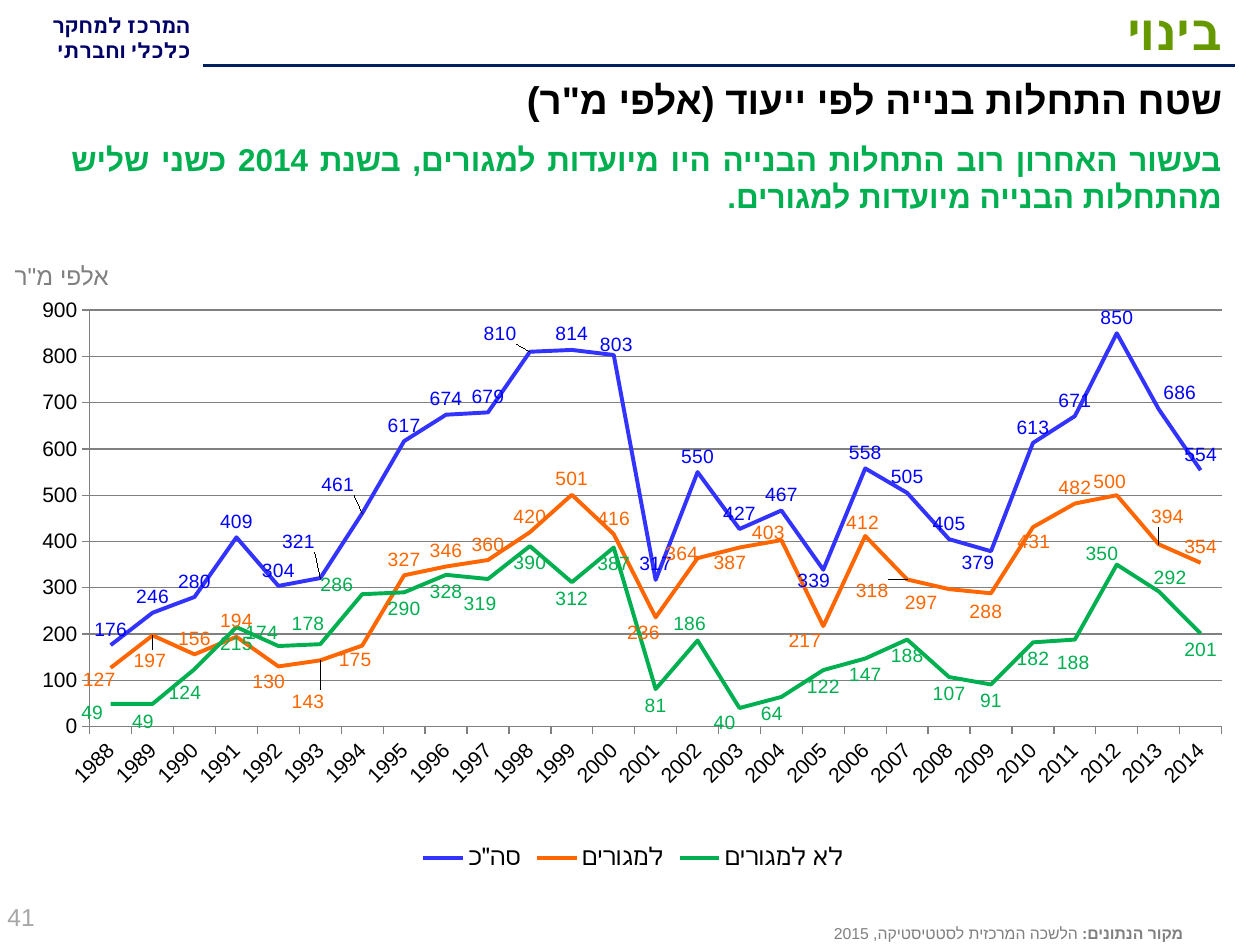
from lxml import etree
from pptx import Presentation
from pptx.chart.data import CategoryChartData
from pptx.dml.color import RGBColor
from pptx.enum.chart import (XL_CHART_TYPE, XL_LABEL_POSITION, XL_LEGEND_POSITION,
                             XL_MARKER_STYLE, XL_TICK_MARK)
from pptx.enum.shapes import MSO_CONNECTOR
from pptx.enum.text import MSO_ANCHOR, PP_ALIGN
from pptx.oxml.ns import qn
from pptx.util import Cm, Pt

LEFT, CENTER, RIGHT, JUSTIFY = PP_ALIGN.LEFT, PP_ALIGN.CENTER, PP_ALIGN.RIGHT, PP_ALIGN.JUSTIFY
TOP, MIDDLE = MSO_ANCHOR.TOP, MSO_ANCHOR.MIDDLE
ABOVE, BELOW = XL_LABEL_POSITION.ABOVE, XL_LABEL_POSITION.BELOW

GREEN, GRAY, BLACK = "00B050", "808080", "000000"
YEARS = [str(year) for year in range(1988, 2015)]

# Name, line colour, label colour, label position, values,
# and label shifts in points (right, down) keyed by year.
SERIES = [
    ("סה\"כ", "3333FF", "0000FF", ABOVE,
     [176, 246, 280, 409, 304, 321, 461, 617, 674, 679, 810, 814, 803, 317,
      550, 427, 467, 339, 558, 505, 405, 379, 613, 671, 850, 686, 554],
     {1993: (-12.5, -11.5), 1994: (-14, -7.5), 1998: (-17, -1.5), 2000: (1.5, 3),
      2005: (-5.5, 15.5), 2009: (-7.5, 15.5), 2013: (12, -0.5)}),
    ("למגורים", "FF6600", "FF6600", ABOVE,
     [127, 197, 156, 194, 130, 143, 175, 327, 346, 360, 420, 501, 416, 236,
      364, 387, 403, 217, 412, 318, 297, 288, 431, 482, 500, 394, 354],
     {1988: (-6.5, 16), 1989: (-1.5, 23.5), 1992: (-5.5, 17.5), 1993: (-7, 32.5),
      1994: (-4, 17), 2001: (-7, 17.5), 2002: (-9, 6.5), 2003: (-5.5, 17.5),
      2004: (-7.5, 4.5), 2005: (-10.5, 17.5), 2006: (-1.5, 1.5), 2007: (-20, 15.5),
      2008: (-16, 16.5), 2009: (-3, 19.5), 2010: (0.5, 17.5), 2012: (-4, 1.5),
      2013: (5, -6.5)}),
    ("לא למגורים", GREEN, GREEN, BELOW,
     [49, 49, 124, 215, 174, 178, 286, 290, 328, 319, 390, 312, 387, 81,
      186, 40, 64, 122, 147, 188, 107, 91, 182, 188, 350, 292, 201],
     {1988: (-10.5, -4.5), 1989: (-5.5, 0.5), 1990: (-5.5, 4), 1992: (-9.5, -17),
      1993: (-7, -21), 1994: (-14.5, -15), 1997: (-4.5, 4.5), 2002: (-4.5, -19),
      2003: (-8.5, -1), 2004: (-5.5, 0), 2011: (-1, 4), 2012: (-8.5, -16),
      2013: (6.5, -17.5)}),
]


def color(hex_value):
    return RGBColor.from_string(hex_value)


def set_line(line_format, hex_value, width):
    line_format.color.rgb = color(hex_value)
    line_format.width = Pt(width)


def manual_layout(**settings):
    layout = etree.Element(qn("c:layout"))
    manual = etree.SubElement(layout, qn("c:manualLayout"))
    for name, value in settings.items():
        etree.SubElement(manual, qn(f"c:{name}")).set("val", str(value))
    return layout


class SlideBuilder:
    def __init__(self, slide, font_name="Arial"):
        self.slide = slide
        self.font_name = font_name

    def style(self, font, size, hex_value, bold=False, name=None):
        font.size = Pt(size)
        font.bold = bold
        font.color.rgb = color(hex_value)
        font.name = name or self.font_name

    def text(self, box, paragraphs, size, hex_value, align=RIGHT, bold=False,
             name=None, anchor=TOP, rtl=True):
        """Add a text box; each paragraph is a list of (text, bold) runs or a string."""
        text_frame = self.slide.shapes.add_textbox(*map(Cm, box)).text_frame
        text_frame.word_wrap = True
        text_frame.vertical_anchor = anchor
        for index, content in enumerate(paragraphs):
            paragraph = text_frame.add_paragraph() if index else text_frame.paragraphs[0]
            paragraph.alignment = align
            if rtl:
                paragraph._p.get_or_add_pPr().set("rtl", "1")
            runs = [(content, bold)] if isinstance(content, str) else content
            for run_text, run_bold in runs:
                run = paragraph.add_run()
                run.text = run_text
                self.style(run.font, size, hex_value, run_bold, name)
                complex_script = etree.SubElement(run._r.get_or_add_rPr(), qn("a:cs"))
                complex_script.set("typeface", name or self.font_name)

    def rule(self, start, end, y, hex_value, width):
        connector = self.slide.shapes.add_connector(
            MSO_CONNECTOR.STRAIGHT, Cm(start), Cm(y), Cm(end), Cm(y))
        set_line(connector.line, hex_value, width)
        etree.SubElement(connector._element.spPr, qn("a:effectLst"))

    def line_chart(self, box, categories, series_rows):
        data = CategoryChartData(number_format="#,##0")
        data.categories = categories
        for name, _, _, _, values, _ in series_rows:
            data.add_series(name, values)
        frame = self.slide.shapes.add_chart(XL_CHART_TYPE.LINE, *map(Cm, box), data)
        chart = frame.chart
        chart.has_title = False
        self.style(chart.font, 14, BLACK)

        plot_area = chart._chartSpace.chart.plotArea
        for layout in plot_area.findall(qn("c:layout")):
            plot_area.remove(layout)
        plot_area.insert(0, manual_layout(
            layoutTarget="inner", xMode="edge", yMode="edge",
            x=0.053, y=0.035, w=0.931, h=0.711))

        self.axes(chart)
        chart.has_legend = True
        legend = chart.legend
        legend.position = XL_LEGEND_POSITION.BOTTOM
        legend.include_in_layout = False
        self.style(legend.font, 14, BLACK)
        legend._element.find(qn("c:legendPos")).addnext(
            manual_layout(xMode="edge", yMode="edge", x=0.33, y=0.9))

        for series, row in zip(chart.plots[0].series, series_rows):
            self.series(series, row, frame)

    def axes(self, chart):
        for axis in (chart.category_axis, chart.value_axis):
            axis.major_tick_mark = XL_TICK_MARK.OUTSIDE
            axis.minor_tick_mark = XL_TICK_MARK.NONE
            self.style(axis.tick_labels.font, 12, BLACK)
            set_line(axis.format.line, GRAY, 0.75)
        labels = chart.category_axis._element.find(qn("c:txPr"))
        labels.find(qn("a:bodyPr")).set("rot", "-2700000")
        value_axis = chart.value_axis
        value_axis.minimum_scale, value_axis.maximum_scale = 0, 900
        value_axis.major_unit = 100
        value_axis.has_major_gridlines = True
        set_line(value_axis.major_gridlines.format.line, GRAY, 0.75)

    def series(self, series, row, frame):
        _, line_color, label_color, position, _, shifts = row
        series.smooth = False
        series.marker.style = XL_MARKER_STYLE.NONE
        set_line(series.format.line, line_color, 2.25)
        labels = series.data_labels
        labels.show_value = True
        labels.number_format = "#,##0"
        labels.number_format_is_linked = False
        labels.position = position
        self.style(labels.font, 11, label_color)
        for year, (right, down) in shifts.items():
            label = series.points[YEARS.index(str(year))].data_label
            label.position = position
            self.style(label.font, 11, label_color)
            label._dLbl.find(qn("c:idx")).addnext(manual_layout(
                x=round(Pt(right) / frame.width, 4), y=round(Pt(down) / frame.height, 4)))


def main():
    presentation = Presentation()
    presentation.slide_width, presentation.slide_height = Cm(25.4), Cm(19.05)
    builder = SlideBuilder(presentation.slides.add_slide(presentation.slide_layouts[6]))

    builder.text((-0.38, 0.13, 4.47, 1.3), ["המרכז למחקר", "כלכלי וחברתי"],
                 12, "000066", bold=True, name="Roboto")
    builder.rule(24.89, 4.09, 1.32, "002060", 2.25)
    builder.text((4.01, -0.08, 20.88, 1.4), ["בינוי"], 28, "669900",
                 bold=True, name="Roboto", anchor=MIDDLE)
    builder.line_chart((0.51, 5.84, 24.51, 11.81), YEARS, SERIES)
    builder.text((0.23, 1.4, 24.66, 1.52), ["שטח התחלות בנייה לפי ייעוד (אלפי מ\"ר)"],
                 22, BLACK, bold=True)
    builder.text((-0.71, 5.13, 3.91, 0.86), ["אלפי מ\"ר"], 14, GRAY, CENTER, rtl=False)
    builder.text((-0.1, 17.93, 5.92, 1.12), ["41"], 14, "A6A6A6", LEFT, anchor=MIDDLE)
    builder.text((1.19, 2.69, 23.7, 2.62),
                 ["בעשור האחרון רוב התחלות הבנייה היו מיועדות למגורים, בשנת 2014 "
                  "כשני שליש מהתחלות הבנייה מיועדות למגורים."],
                 18, GREEN, JUSTIFY, bold=True)
    builder.text((6.5, 18.49, 17.6, 0.64),
                 [[("מקור הנתונים: ", True), ("הלשכה המרכזית לסטטיסטיקה, 2015", False)]],
                 9, GRAY)
    presentation.save("out.pptx")


if __name__ == "__main__":
    main()
